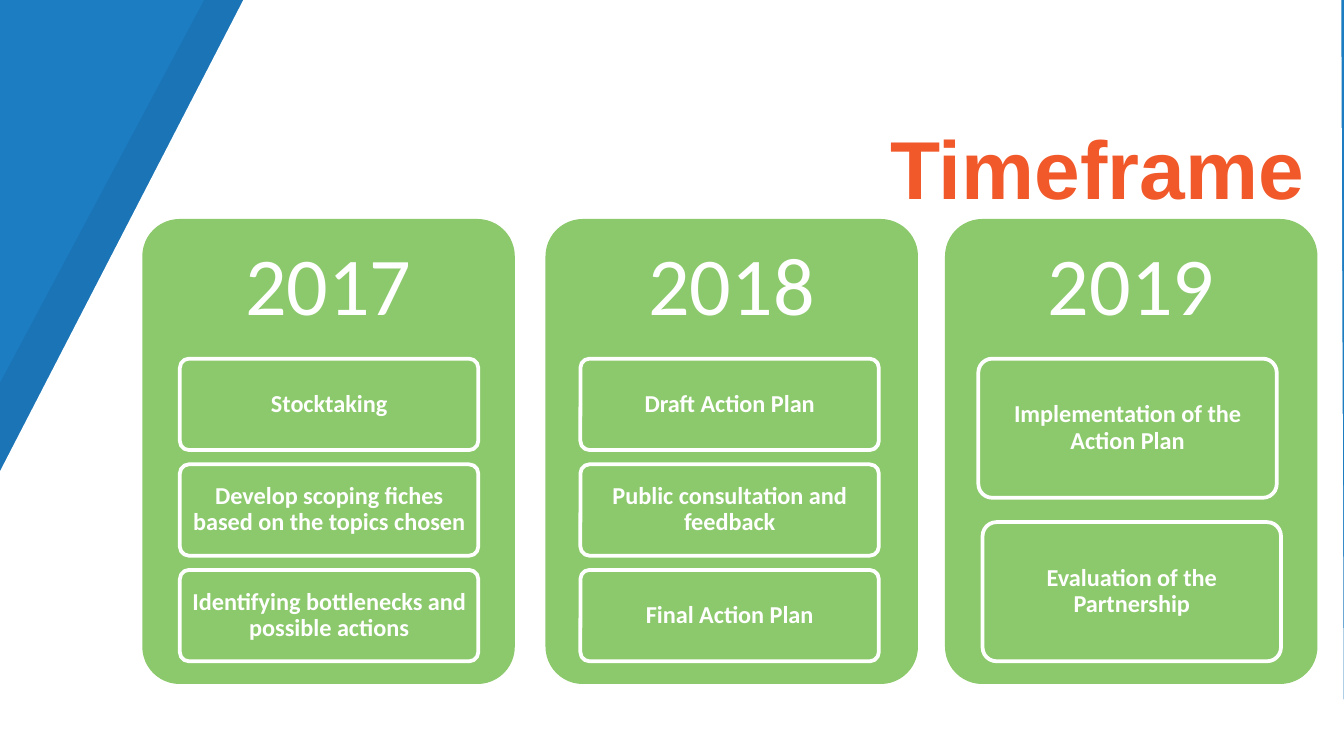
from dataclasses import dataclass

from pptx import Presentation
from pptx import util as u
from pptx.dml import color
from pptx.enum import shapes, text


@dataclass(frozen=True)
class Theme:
    """Colours, fonts and type sizes of the slide."""
    deep: str = "1A74B5"
    blue: str = "1C7DC3"
    white: str = "FFFFFF"
    green: str = "8CC96C"
    orange: str = "F1592A"
    head_font: str = "Arial"
    body_font: str = "Calibri"
    large: int = 44
    small: int = 13


T = Theme()
WIDTH, HEIGHT = 25.4, 14.29
PANEL_TOP, PANEL_W, PANEL_H = 4.14, 7.04, 8.79
YEAR_H, CARD_W, CARDS_H = 2.64, 5.64, 5.72
COLUMNS = [
    dict(left=2.69, year="2017", inset=0.71, step=0, gap=0.27, cards=[
        "Stocktaking",
        "Develop scoping fiches based on the topics chosen",
        "Identifying bottlenecks and possible actions"]),
    dict(left=10.31, year="2018", inset=0.66, step=0, gap=0.27, cards=[
        "Draft Action Plan",
        "Public consultation and feedback",
        "Final Action Plan"]),
    dict(left=17.86, year="2019", inset=0.63, step=0.08, gap=0.46, cards=[
        "Implementation of the Action Plan",
        "Evaluation of the Partnership"]),
]


def rgb(value):
    """Return a colour from its hex code."""
    return color.RGBColor.from_string(value)


def cm_box(*box):
    """Return the lengths of a box given in centimetres."""
    return [u.Cm(v) for v in box]


def write(sp, words, fmt, ink=T.white, align="CENTER", spacing=0.9, pad=(0.1, 0.08)):
    """Write one centred-in-height paragraph into a shape."""
    tf = sp.text_frame
    x, y = cm_box(*pad)
    frame = dict(word_wrap=True, vertical_anchor=text.MSO_ANCHOR.MIDDLE,
                 margin_left=x, margin_right=x, margin_top=y, margin_bottom=y)
    for name, value in frame.items():
        setattr(tf, name, value)
    p = tf.paragraphs[0]
    p.alignment = text.PP_ALIGN[align]
    p.line_spacing = spacing
    r = p.add_run()
    r.text = words
    for name, value in fmt.items():
        setattr(r.font, name, value)
    r.font.color.rgb = rgb(ink)


def add_panel(s, box, line=None):
    """Add a green rounded rectangle, outlined if a line colour is given."""
    sp = s.shapes.add_shape(shapes.MSO_SHAPE.ROUNDED_RECTANGLE, *cm_box(*box))
    sp.adjustments[0] = 0.1
    sp.shadow.inherit = False
    sp.fill.solid()
    sp.fill.fore_color.rgb = rgb(T.green)
    if line:
        sp.line.color.rgb = rgb(line)
        sp.line.width = u.Pt(2)
    else:
        sp.line.fill.background()
    return sp


def add_backdrop(s, width, height):
    """Lay the white page and the darker slanted band over the blue ground."""
    s.background.fill.solid()
    s.background.fill.fore_color.rgb = rgb(T.blue)
    for ink, top_x, left_y in ((T.deep, 3.86, 7.24), (T.white, 4.6, 8.91)):
        points = [(width - 0.05, 0), (width, height), (0, height), (0, left_y)]
        builder = s.shapes.build_freeform(u.Cm(top_x), 0)
        builder.add_line_segments([cm_box(*pt) for pt in points])
        sp = builder.convert_to_shape()
        sp.shadow.inherit = False
        sp.fill.solid()
        sp.fill.fore_color.rgb = rgb(ink)
        sp.line.fill.background()


def add_title(s, box):
    """Place the slide title."""
    sp = s.shapes.add_textbox(*cm_box(*box))
    write(sp, "Timeframe", dict(name=T.head_font, size=u.Pt(T.large), bold=True),
          ink=T.orange, align="RIGHT", spacing=1.0, pad=(0.25, 0.13))


def add_column(s, box, year, inset, step, gap, cards):
    """Place a year panel and stack its cards at equal gaps."""
    left, top, width, _ = box
    add_panel(s, box)
    sp = s.shapes.add_textbox(*cm_box(left, top, width, YEAR_H))
    write(sp, year, dict(name=T.body_font, size=u.Pt(T.large)), pad=(0.46, 0.46))
    height = (CARDS_H - gap * (len(cards) - 1)) / len(cards)
    for i, words in enumerate(cards):
        card = add_panel(s, (left + inset + i * step, top + YEAR_H + i * (height + gap),
                             CARD_W, height), line=T.white)
        write(card, words, dict(name=T.body_font, size=u.Pt(T.small), bold=True))


def main():
    """Build and save the slide."""
    prs = Presentation()
    prs.slide_width, prs.slide_height = cm_box(WIDTH, HEIGHT)
    s = prs.slides.add_slide(prs.slide_layouts[6])
    add_backdrop(s, WIDTH, HEIGHT)
    add_title(s, (1.3, 1.96, 23.6, 2.39))
    for column in COLUMNS:
        parts = dict(column)
        add_column(s, (parts.pop("left"), PANEL_TOP, PANEL_W, PANEL_H), **parts)
    prs.save("out.pptx")


if __name__ == "__main__":
    main()
